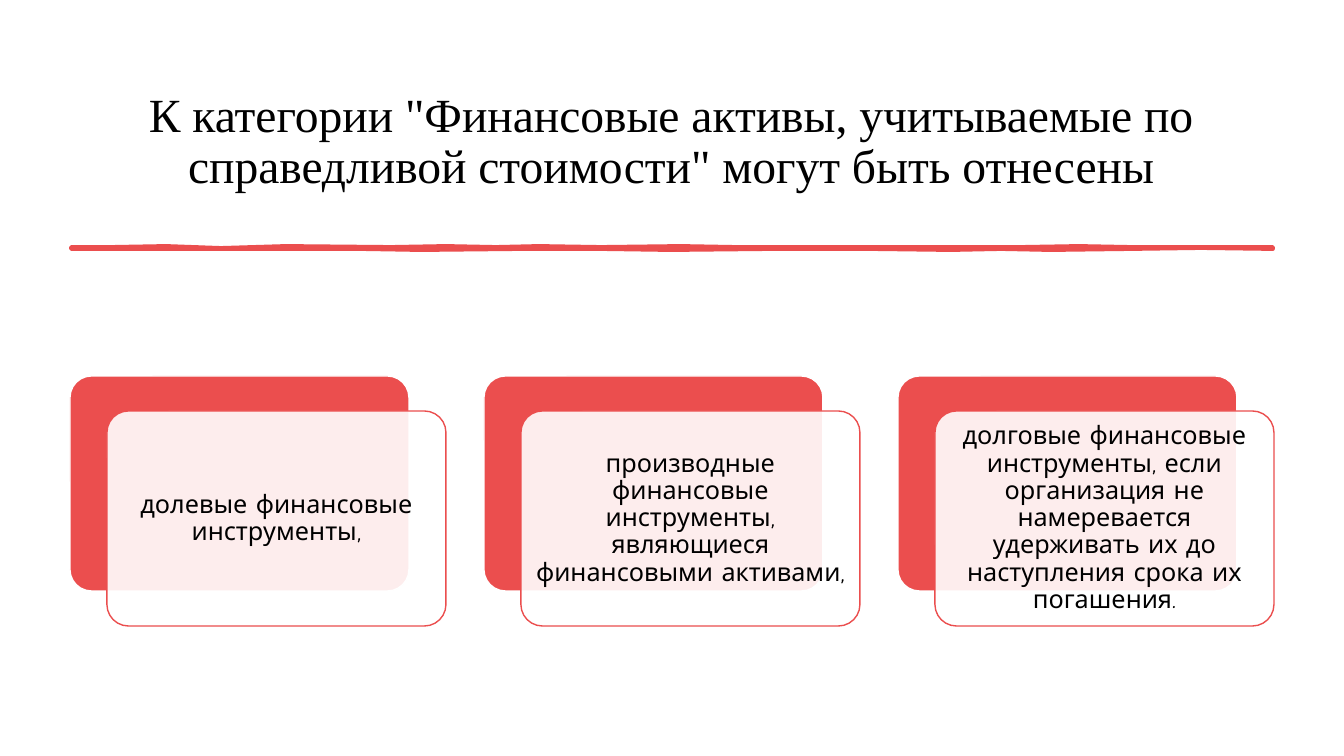
from dataclasses import dataclass

from lxml.etree import SubElement
from pptx import Presentation
from pptx.dml.color import RGBColor
from pptx.enum.shapes import MSO_SHAPE as Shape
from pptx.enum.text import MSO_ANCHOR as Anchor, PP_ALIGN as Align
from pptx.oxml.ns import qn
from pptx.util import Pt

PX = 914400 / 100.8  # EMU in one px


@dataclass(frozen=True)
class Theme:
    accent: RGBColor = RGBColor(0xEB, 0x4E, 0x4E)
    paper: RGBColor = RGBColor(0xFF, 0xFF, 0xFF)
    ink: RGBColor = RGBColor(0, 0, 0)
    title_font: str = "Times New Roman"
    body_font: str = "Comic Neue"
    title_size: int = 34
    body_size: int = 18
    rule_width: float = 2.75
    card_line: int = 1
    card_alpha: int = 90


THEME = Theme()

TITLE = ('К категории "Финансовые активы, учитываемые по '
         'справедливой стоимости" могут быть отнесены')
CARDS = [
    "долевые финансовые инструменты,",
    "производные финансовые инструменты, являющиеся финансовыми активами,",
    "долговые финансовые инструменты, если организация не намеревается "
    "удерживать их до наступления срока их погашения.",
]

# Hand-drawn rule: (distance from its left end, offset from its top)
RULE_TOP = [(0, 1), (40, 1), (95, 0), (150, 2), (215, 0), (320, 1), (375, 0),
            (425, 1), (468, 0), (530, 1), (610, 0), (665, 1), (740, 1),
            (820, 1), (900, 1), (950, 1), (1008, 0), (1060, 1), (1130, 1), (1202, 1)]
RULE_BOTTOM = [(1202, 3), (1130, 2), (1060, 3), (980, 4), (930, 3), (880, 4),
               (800, 3), (700, 3), (600, 4), (530, 3), (450, 3), (350, 4),
               (290, 3), (220, 3), (160, 3), (80, 3), (0, 3)]


def emu(*lengths):
    return [round(length * PX) for length in lengths]


def write(shape, text, font, size, inset):
    frame = shape.text_frame
    frame.word_wrap = True
    frame.vertical_anchor = Anchor.MIDDLE
    frame.margin_left, frame.margin_top, frame.margin_right, frame.margin_bottom = emu(*inset)
    para = frame.paragraphs[0]
    para.alignment = Align.CENTER
    para.line_spacing = 0.9
    span = para.add_run()
    span.text = text
    span.font.name = font
    span.font.size = Pt(size)
    span.font.color.rgb = THEME.ink


def paint(shape, fill, line, width):
    shape.shadow.inherit = False
    shape.fill.solid()
    shape.fill.fore_color.rgb = fill
    shape.line.color.rgb = line
    shape.line.width = Pt(width)


def add_title(page, box):
    title = page.shapes.add_textbox(*emu(*box))
    write(title, TITLE, THEME.title_font, THEME.title_size, (10, 5, 10, 5))


def add_rule(page, left, top):
    start, *rest = [(left + x, top + y) for x, y in RULE_TOP + RULE_BOTTOM]
    builder = page.shapes.build_freeform(*start, scale=PX)
    builder.add_line_segments(rest, close=True)
    paint(builder.convert_to_shape(), THEME.accent, THEME.accent, THEME.rule_width)


def add_panel(page, box, fill, line):
    panel = page.shapes.add_shape(Shape.ROUNDED_RECTANGLE, *emu(*box))
    panel.adjustments[0] = 0.1
    paint(panel, fill, line, THEME.card_line)
    return panel


def add_card(page, box, text):
    left, top, width, height = box
    shift_x, shift_y = 37, 35
    size = width - shift_x, height - shift_y
    # Solid panel behind
    add_panel(page, (left, top, *size), THEME.accent, THEME.paper)
    # Translucent panel in front carries the text
    front = add_panel(page, (left + shift_x, top + shift_y, *size), THEME.paper, THEME.accent)
    color = front.fill._xPr.find(qn("a:solidFill"))[0]
    SubElement(color, qn("a:alpha"), val=str(THEME.card_alpha * 1000))
    write(front, text, THEME.body_font, THEME.body_size, (7, 7, 7, 7))


def add_cards(page, box):
    left, top, width, height = box
    gap = 38
    card_width = (width - gap * (len(CARDS) - 1)) // len(CARDS)
    for index, text in enumerate(CARDS):
        add_card(page, (left + index * (card_width + gap), top, card_width, height), text)


def main():
    deck = Presentation()
    deck.slide_width, deck.slide_height = emu(1344, 756)
    page = deck.slides.add_slide(deck.slide_layouts[6])
    page.background.fill.solid()
    page.background.fill.fore_color.rgb = THEME.paper
    add_title(page, (70, 70, 1203, 145))
    add_rule(page, 71, 246)
    add_cards(page, (70, 376, 1204, 250))
    deck.save("out.pptx")


if __name__ == "__main__":
    main()
